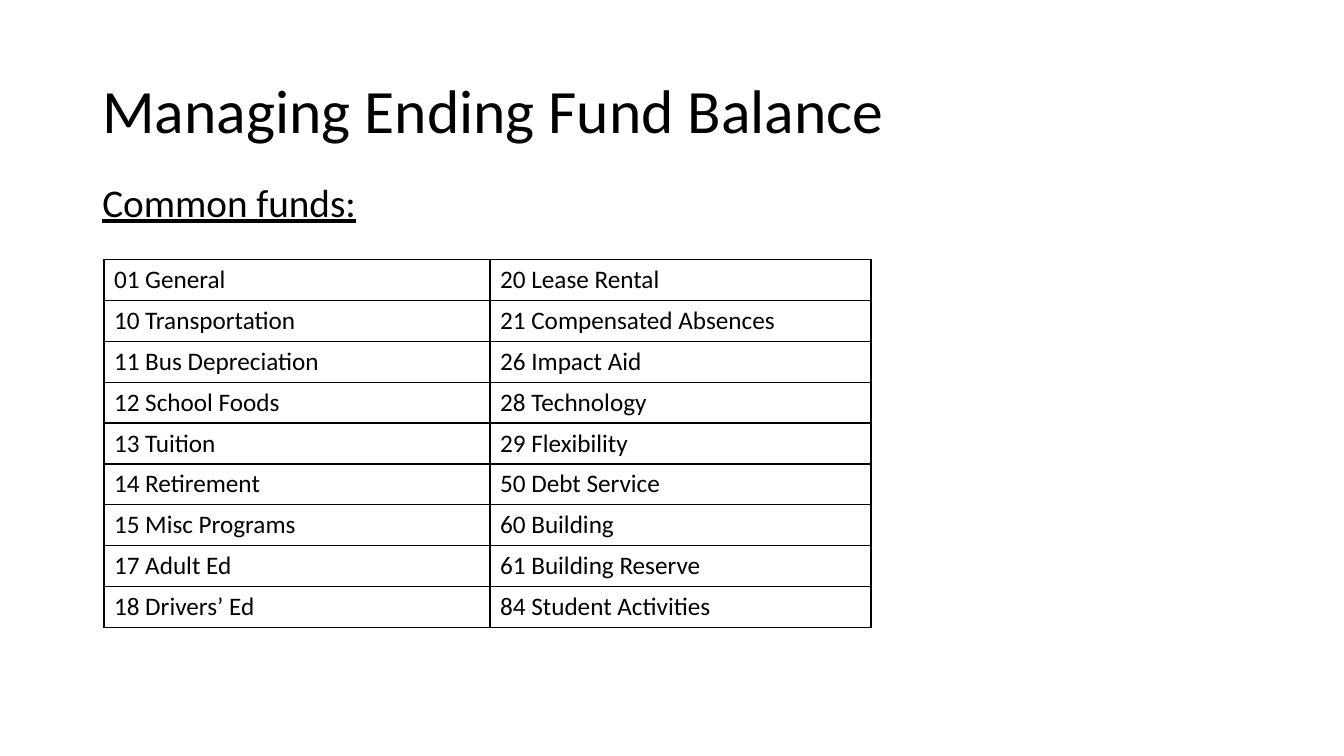
"""Build the slide listing the common funds in a two-column table."""
import dataclasses

import pptx
import pptx.dml.color
import pptx.enum.text
import pptx.oxml
import pptx.oxml.ns
import pptx.util

Cm = pptx.util.Cm
Pt = pptx.util.Pt

TITLE = "Managing Ending Fund Balance"
SUBTITLE = "Common funds:"
FUNDS = [
    ("01 General", "20 Lease Rental"),
    ("10 Transportation", "21 Compensated Absences"),
    ("11 Bus Depreciation", "26 Impact Aid"),
    ("12 School Foods", "28 Technology"),
    ("13 Tuition", "29 Flexibility"),
    ("14 Retirement", "50 Debt Service"),
    ("15 Misc Programs", "60 Building"),
    ("17 Adult Ed", "61 Building Reserve"),
    ("18 Drivers’ Ed", "84 Student Activities"),
]
COLUMN_WIDTHS = (Cm(9.73), Cm(9.6))
ROW_HEIGHT = Cm(1.03)
TEXT_LEFT = Cm(2.33)


@dataclasses.dataclass(frozen=True)
class Theme:
    """Colours, font and sizes of the slide."""

    font: str = "Calibri"
    ink: str = "000000"
    title_size: int = 44
    subtitle_size: int = 28
    table_size: int = 18
    border_width: int = 1


THEME = Theme()


def style_paragraph(paragraph, text, size):
    """Write the text in the theme's font and colour."""
    paragraph.text = text
    paragraph.font.name = THEME.font
    paragraph.font.size = Pt(size)
    paragraph.font.color.rgb = pptx.dml.color.RGBColor.from_string(THEME.ink)


def add_heading(slide, text, size, top, width, height, anchor):
    """Add a one-paragraph heading and return its paragraph."""
    frame = slide.shapes.add_textbox(TEXT_LEFT, top, width, height).text_frame
    frame.word_wrap = True
    frame.vertical_anchor = anchor
    paragraph = frame.paragraphs[0]
    style_paragraph(paragraph, text, size)
    paragraph.line_spacing = 0.9
    return paragraph


def set_borders(cell):
    """Draw a thin line on each side of the cell."""
    properties = cell._tc.get_or_add_tcPr()
    for position, side in enumerate("LRTB"):
        line = pptx.oxml.parse_xml(
            f'<a:ln{side} {pptx.oxml.ns.nsdecls("a")} w="{Pt(THEME.border_width)}">'
            f'<a:solidFill><a:srgbClr val="{THEME.ink}"/></a:solidFill></a:ln{side}>'
        )
        properties.insert(position, line)


def add_fund_table(slide):
    """Add the bordered table of funds."""
    table = slide.shapes.add_table(
        len(FUNDS), len(COLUMN_WIDTHS), Cm(2.62), Cm(6.54),
        sum(COLUMN_WIDTHS), ROW_HEIGHT * len(FUNDS),
    ).table
    table.first_row = False
    table.horz_banding = False
    for column, width in zip(table.columns, COLUMN_WIDTHS):
        column.width = width
    for row, funds in zip(table.rows, FUNDS):
        row.height = ROW_HEIGHT
        for cell, fund in zip(row.cells, funds):
            style_paragraph(cell.text_frame.paragraphs[0], fund, THEME.table_size)
            cell.fill.background()
            set_borders(cell)


def main():
    """Create and save the presentation."""
    presentation = pptx.Presentation()
    presentation.slide_width = Cm(33.87)
    presentation.slide_height = Cm(19.05)
    slide = presentation.slides.add_slide(presentation.slide_layouts[6])
    anchors = pptx.enum.text.MSO_ANCHOR
    add_heading(slide, TITLE, THEME.title_size,
                Cm(1.02), Cm(29.21), Cm(3.68), anchors.MIDDLE)
    subtitle = add_heading(slide, SUBTITLE, THEME.subtitle_size,
                           Cm(4.67), Cm(14.33), Cm(1.14), anchors.BOTTOM)
    subtitle.font.underline = True
    subtitle.space_before = Pt(10)
    add_fund_table(slide)
    presentation.save("out.pptx")


if __name__ == "__main__":
    main()
